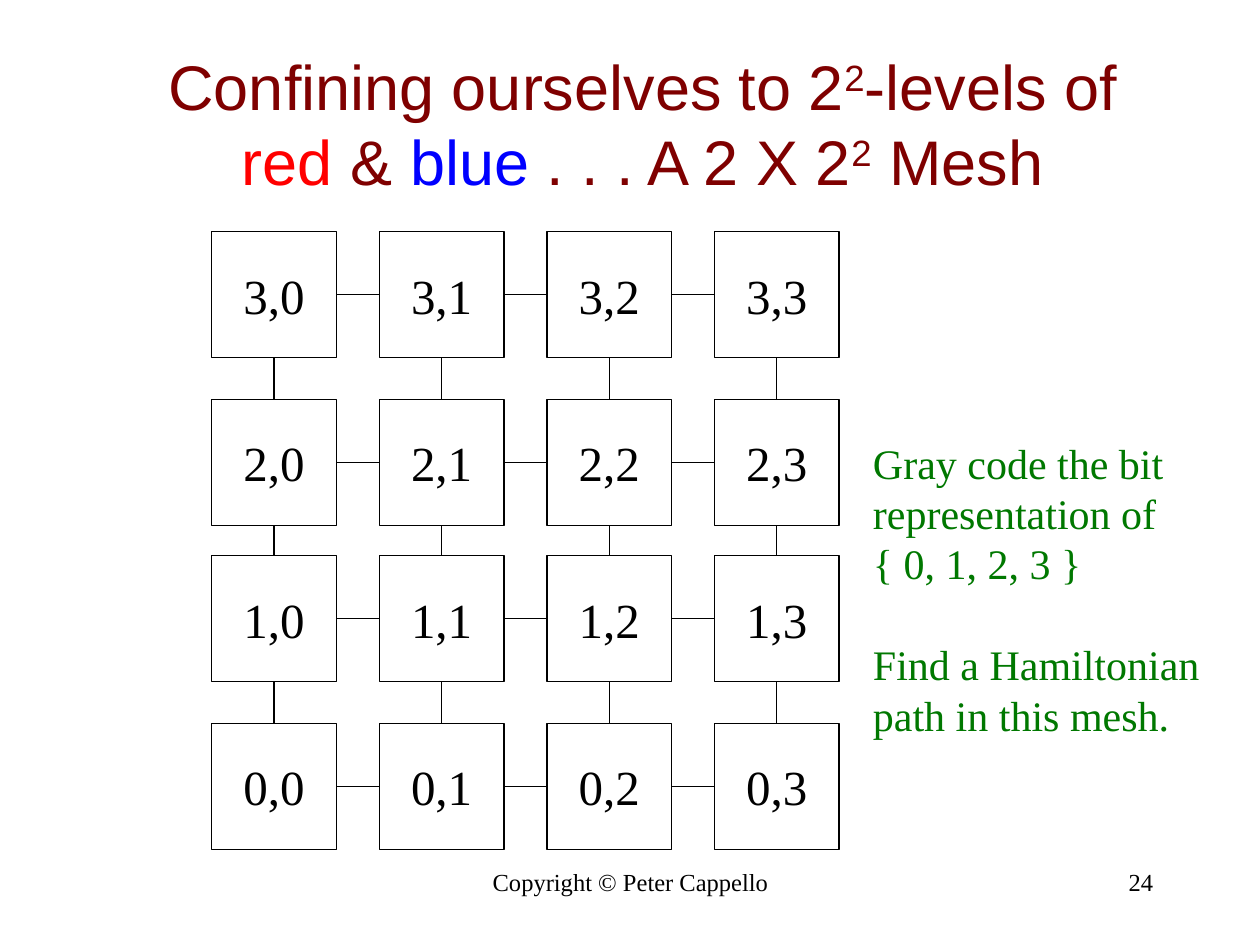
from lxml import etree
from pptx import Presentation
from pptx.dml.color import RGBColor
from pptx.enum import shapes, text
from pptx.oxml.ns import qn
from pptx.util import Inches, Pt

BLACK = RGBColor(0, 0, 0)
WHITE = RGBColor(255, 255, 255)
MAROON = RGBColor(127, 0, 0)
RED = RGBColor(255, 0, 0)
BLUE = RGBColor(0, 0, 255)
GREEN = RGBColor(0, 120, 0)
SERIF = "Times New Roman"
LEFT, MID, RIGHT = text.PP_ALIGN.LEFT, text.PP_ALIGN.CENTER, text.PP_ALIGN.RIGHT


def style(run, size, color, name=SERIF):
    run.font.size = Pt(size)
    run.font.name = name
    run.font.color.rgb = color


def add_title(slide, left, top, width, height):
    title = slide.shapes.title
    title.left, title.top = Inches(left), Inches(top)
    title.width, title.height = Inches(width), Inches(height)
    frame = title.text_frame
    frame.auto_size = text.MSO_AUTO_SIZE.NONE
    frame.vertical_anchor = text.MSO_ANCHOR.MIDDLE
    para = frame.paragraphs[0]
    para.alignment = MID
    parts = [
        ("Confining ourselves to 2", MAROON, False),
        ("2", MAROON, True),
        ("-levels of ", MAROON, False),
        ("red", RED, False),
        (" & ", MAROON, False),
        ("blue", BLUE, False),
        (" . . . A 2 X 2", MAROON, False),
        ("2", MAROON, True),
        (" Mesh", MAROON, False),
    ]
    for words, color, raised in parts:
        run = para.add_run()
        run.text = words
        style(run, 36, color, "Arial")
        if raised:
            run.font._element.set("baseline", "30000")


def add_link(slide, x1, y1, x2, y2):
    link = slide.shapes.add_connector(
        shapes.MSO_CONNECTOR.STRAIGHT, Inches(x1), Inches(y1), Inches(x2), Inches(y2))
    link.line.color.rgb = BLACK
    link.line.width = Pt(0.75)
    etree.SubElement(link._element.spPr, qn("a:effectLst"))


def add_node(slide, label, left, top, width, height):
    node = slide.shapes.add_shape(
        shapes.MSO_SHAPE.RECTANGLE, Inches(left), Inches(top), Inches(width), Inches(height))
    node.shadow.inherit = False
    node.fill.solid()
    node.fill.fore_color.rgb = WHITE
    node.line.color.rgb = BLACK
    node.line.width = Pt(0.75)
    frame = node.text_frame
    frame.word_wrap = False
    frame.vertical_anchor = text.MSO_ANCHOR.MIDDLE
    frame.text = label
    para = frame.paragraphs[0]
    para.alignment = MID
    style(para.runs[0], 28, BLACK)


def add_mesh(slide, left, top):
    width, height = 0.99, 1
    cols = [left + 1.33 * col for col in range(4)]
    rows = [top + drop for drop in (0, 1.33, 2.57, 3.9)]
    mids_x = [x + width / 2 for x in cols]
    mids_y = [y + height / 2 for y in rows]
    for x in mids_x:
        add_link(slide, x, mids_y[0], x, mids_y[-1])
    for y in mids_y:
        add_link(slide, mids_x[0], y, mids_x[-1], y)
    for row, y in enumerate(rows):
        for col, x in enumerate(cols):
            add_node(slide, f"{3 - row},{col}", x, y, width, height)


def add_text(slide, words, left, top, width, height, size, color, align, wrap=True):
    box = slide.shapes.add_textbox(Inches(left), Inches(top), Inches(width), Inches(height))
    frame = box.text_frame
    frame.word_wrap = wrap
    frame.text = words
    for para in frame.paragraphs:
        para.alignment = align
        style(para.runs[0], size, color)
    return frame


def add_task(slide, left, top, width, height):
    lines = ["Gray code the bit", "representation of", "{ 0, 1, 2, 3 }",
             "Find a Hamiltonian", "path in this mesh."]
    frame = add_text(slide, "\n".join(lines), left, top, width, height, 24, GREEN, LEFT, False)
    for para in frame.paragraphs:
        para.line_spacing = Pt(28.8)
    frame.paragraphs[3].space_before = Pt(28.8)


def add_footer(slide, top, height):
    add_text(slide, "Copyright © Peter Cappello", 3.42, top, 3.17, height, 14, BLACK, MID)
    add_text(slide, "24", 7.17, top, 2.08, height, 14, BLACK, RIGHT)


def main():
    deck = Presentation()
    deck.slide_width, deck.slide_height = Inches(10), Inches(7.5)
    slide = deck.slides.add_slide(deck.slide_layouts[5])
    add_footer(slide, 6.83, 0.5)
    add_title(slide, 0.85, 0.35, 8.5, 1.25)
    add_mesh(slide, 1.68, 1.84)
    add_task(slide, 6.83, 3.42, 2.79, 2.5)
    deck.save("out.pptx")


if __name__ == "__main__":
    main()
